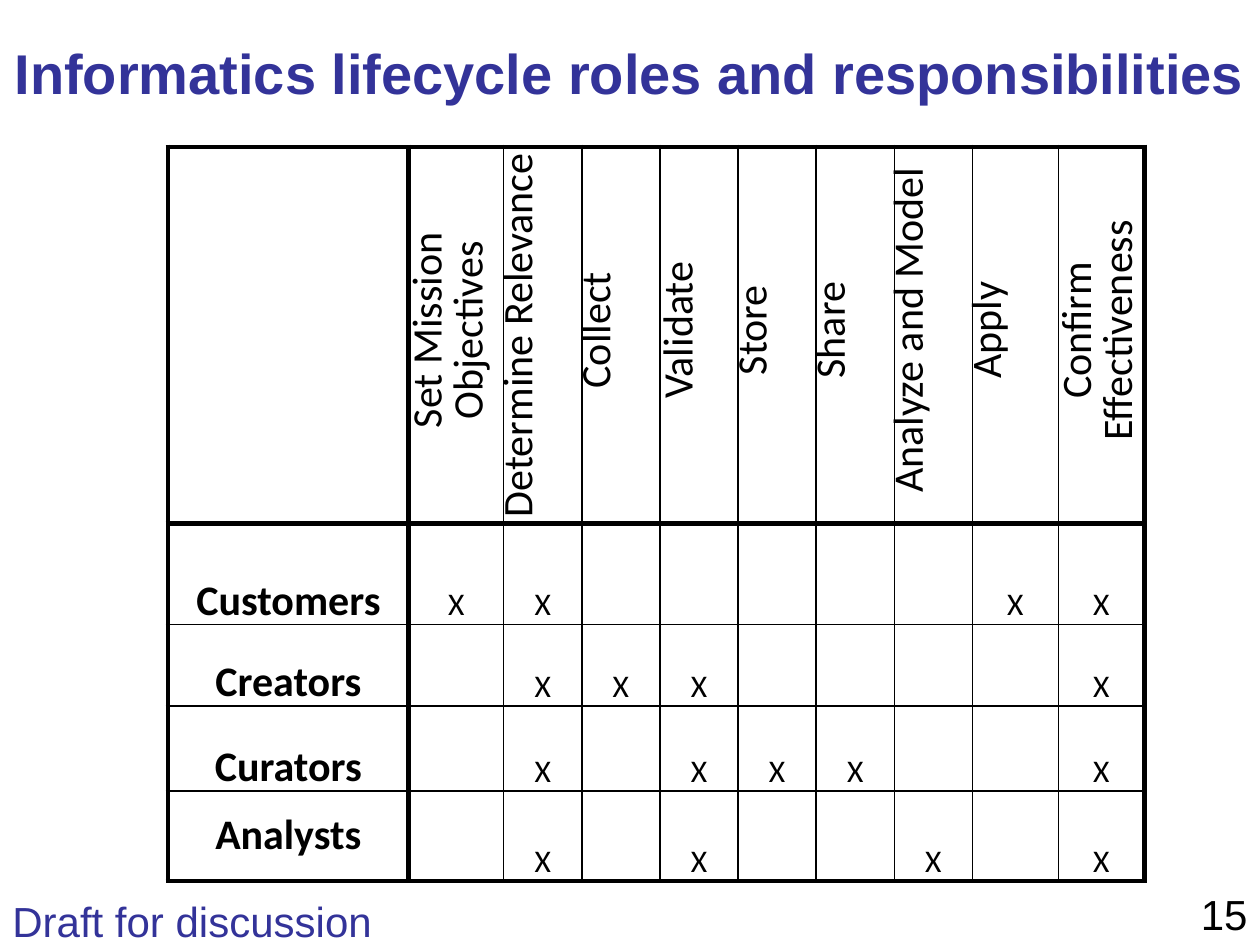
from lxml import etree
from pptx import Presentation
from pptx import util as u
from pptx.dml.color import RGBColor
from pptx.enum import text
from pptx.oxml.ns import qn

Pt = u.Pt
COLORS = {"accent": "333399", "ink": "000000"}
ALIGN, ANCHOR = text.PP_ALIGN, text.MSO_ANCHOR

# Content: steps as (label, line spacing), roles with the steps they take part in
TITLE = "Informatics lifecycle roles and responsibilities"
FOOTER = "Draft for discussion"
PAGE = "15"
STEPS = [
    ("Set Mission\vObjectives", 0.8), ("Determine Relevance", 0.7),
    ("Collect", 0.7), ("Validate", 0.8), ("Store", 0.7), ("Share", 0.7),
    ("Analyze and Model", 0.7), ("Apply", 0.7),
    ("Confirm Effectiveness", 0.8),
]
ROLES = {
    "Customers": (1, 2, 8, 9),
    "Creators": (2, 3, 4, 9),
    "Curators": (2, 4, 5, 6, 9),
    "Analysts": (2, 4, 7, 9),
}
COL_WIDTHS = [137.6, 54.2] + [44.65] * 6 + [49.1] * 2
ROW_HEIGHTS = [173.5, 57.6, 46.8, 48.5, 51.4]
TABLE_LEFT, TABLE_TOP = 96, 84
THIN, THICK = 1, 3


def write(tf, words, color="ink", font="Arial", size=24, bold=False, **layout):
    p = tf.paragraphs[0]
    for name, value in layout.items():
        setattr(p, name, value)
    p.text = words
    for r in p.runs:
        formats = {"name": font, "size": Pt(size), "bold": bold}
        for name, value in formats.items():
            setattr(r.font, name, value)
        r.font.color.rgb = RGBColor.from_string(COLORS[color])
    return p


def add_text(slide, box, words, anchor=ANCHOR.TOP, **formats):
    sp = slide.shapes.add_textbox(*map(Pt, box))
    tf = sp.text_frame
    tf.word_wrap = True
    tf.vertical_anchor = anchor
    write(tf, words, **formats)
    return tf


def set_borders(cell, widths):
    tc_pr = cell._tc.get_or_add_tcPr()
    for i, (side, width) in enumerate(zip("LRTB", widths)):
        ln = etree.Element(qn("a:ln" + side), w=str(Pt(width)))
        fill = etree.SubElement(ln, qn("a:solidFill"))
        etree.SubElement(fill, qn("a:srgbClr"), val=COLORS["ink"])
        tc_pr.insert(i, ln)


def fill_cell(cell, words, anchor, **formats):
    insets = {"margin_left": 2.2, "margin_right": 2.2,
              "margin_top": 0, "margin_bottom": 0}
    for name, value in insets.items():
        setattr(cell, name, Pt(value))
    cell.vertical_anchor = anchor
    return write(cell.text_frame, words, font="Calibri",
                 alignment=ALIGN.CENTER, **formats)


def add_matrix(slide):
    n_rows, n_cols = len(ROW_HEIGHTS), len(COL_WIDTHS)
    table = slide.shapes.add_table(
        n_rows, n_cols, Pt(TABLE_LEFT), Pt(TABLE_TOP),
        Pt(sum(COL_WIDTHS)), Pt(sum(ROW_HEIGHTS))).table
    table.first_row = table.horz_banding = False
    for col, width in zip(table.columns, COL_WIDTHS):
        col.width = Pt(width)
    for row, height in zip(table.rows, ROW_HEIGHTS):
        row.height = Pt(height)

    # Thick lines run round the table and after the header row and column
    def line(edge, count):
        return THICK if edge in (0, 1, count) else THIN

    for r in range(n_rows):
        for c in range(n_cols):
            cell = table.cell(r, c)
            cell.fill.background()
            set_borders(cell, (line(c, n_cols), line(c + 1, n_cols),
                               line(r, n_rows), line(r + 1, n_rows)))

    # Step names, turned upwards
    for c, (step, spacing) in enumerate(STEPS, 1):
        cell = table.cell(0, c)
        anchor = ANCHOR.TOP if step == "Share" else ANCHOR.MIDDLE
        p = fill_cell(cell, step, anchor, line_spacing=spacing)
        cell._tc.get_or_add_tcPr().set("vert", "vert270")
        if step != "Determine Relevance":
            p.space_after = Pt(18)
            p._p.get_or_add_pPr().set("marL", str(Pt(5.75)))

    # Role names and their marks
    for r, (role, marks) in enumerate(ROLES.items(), 1):
        anchor = ANCHOR.MIDDLE if role == "Analysts" else ANCHOR.BOTTOM
        fill_cell(table.cell(r, 0), role, anchor, bold=True, line_spacing=0.9)
        for c in marks:
            fill_cell(table.cell(r, c), "X", ANCHOR.BOTTOM, size=18,
                      space_after=Pt(18))


def main():
    prs = Presentation()
    prs.slide_width, prs.slide_height = Pt(720), Pt(540)
    slide = prs.slides.add_slide(prs.slide_layouts[6])

    # Title and page number
    add_text(slide, (0, 0, 720, 90), TITLE, ANCHOR.MIDDLE, color="accent",
             size=32, bold=True, alignment=ALIGN.CENTER, line_spacing=0.8)
    add_text(slide, (552, 504, 168, 36), PAGE, alignment=ALIGN.RIGHT)

    # Responsibility matrix
    add_matrix(slide)

    # Footer
    tf = add_text(slide, (0, 508.3, 340.5, 36.4), FOOTER, color="accent")
    tf.auto_size = text.MSO_AUTO_SIZE.SHAPE_TO_FIT_TEXT

    prs.save("out.pptx")


if __name__ == "__main__":
    main()
